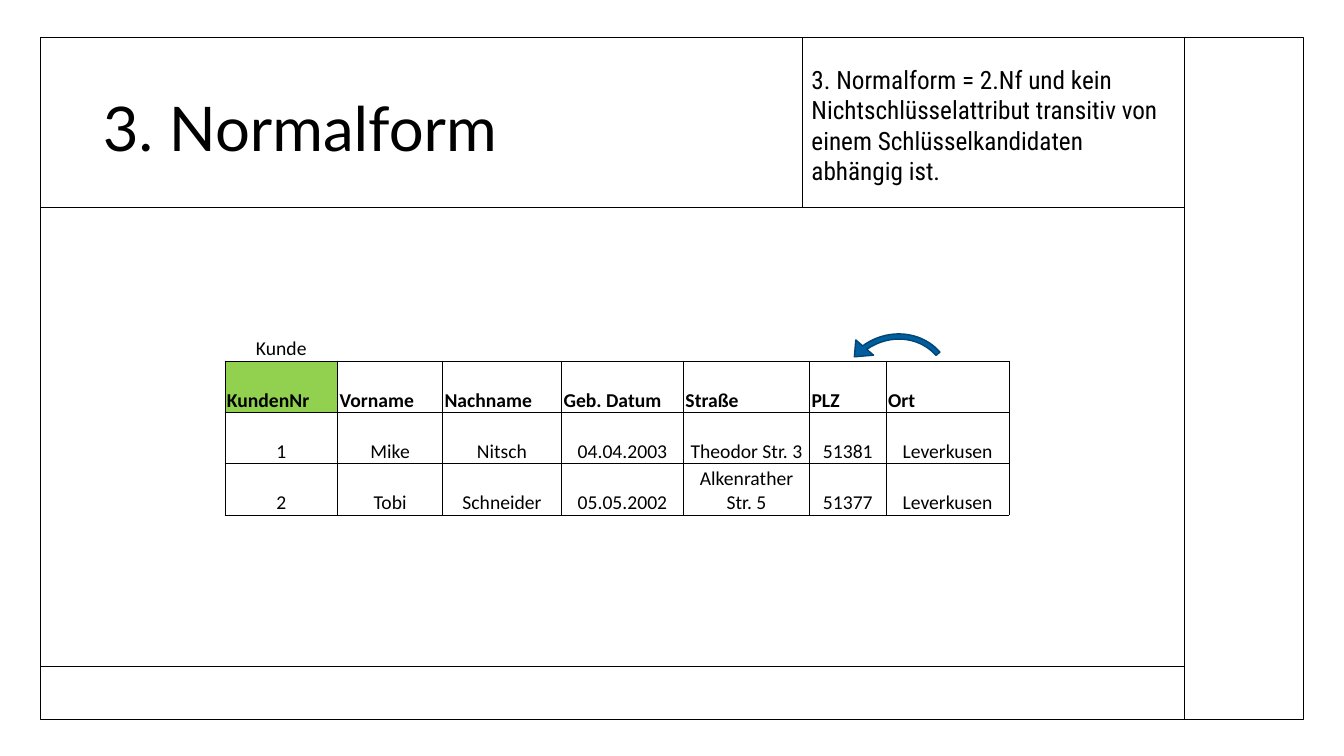
import pptx
import pptx.util
import pptx.dml.color
import pptx.enum.shapes
import pptx.enum.text
import pptx.oxml
import pptx.oxml.ns
import lxml.etree

Inches = pptx.util.Inches
Pt = pptx.util.Pt
RGBColor = pptx.dml.color.RGBColor
Align = pptx.enum.text.PP_ALIGN
Anchor = pptx.enum.text.MSO_ANCHOR
Shape = pptx.enum.shapes.MSO_SHAPE
qn = pptx.oxml.ns.qn

TITLE = "3. Normalform"
DEFINITION = ("3. Normalform = 2.Nf und kein Nichtschlüsselattribut transitiv von "
              "einem Schlüsselkandidaten abhängig ist.")
CUSTOMERS = [
    ["Kunde", "", "", "", "", "", ""],
    ["KundenNr", "Vorname", "Nachname", "Geb. Datum", "Straße", "PLZ", "Ort"],
    ["1", "Mike", "Nitsch", "04.04.2003", "Theodor Str. 3", "51381", "Leverkusen"],
    ["2", "Tobi", "Schneider", "05.05.2002", "Alkenrather Str. 5", "51377", "Leverkusen"],
]
COLUMN_WIDTHS = [1.12, 1.04, 1.18, 1.21, 1.25, 0.76, 1.22]
ROW_HEIGHTS = [0.4, 0.51, 0.51, 0.51]
CAPTION_ROW, HEADER_ROW = 0, 1

LEFT, TOP, RIGHT, BOTTOM = 0.4, 0.37, 12.93, 7.14
HEADER_BOTTOM, FOOTER_TOP = 2.06, 6.61
BODY_RIGHT, TITLE_RIGHT = 11.75, 7.96
DIVIDERS = [
    (LEFT, FOOTER_TOP, BODY_RIGHT, FOOTER_TOP),
    (BODY_RIGHT, TOP, BODY_RIGHT, BOTTOM),
    (LEFT, HEADER_BOTTOM, BODY_RIGHT, HEADER_BOTTOM),
    (TITLE_RIGHT, TOP, TITLE_RIGHT, HEADER_BOTTOM),
]
ARROW_ADJUSTMENTS = [0.04, 8.95, 157.88, 108, 0.09]
NO_STYLE = "{2D5ABB26-0587-4C30-8999-92F81FD0307C}"

BLACK = RGBColor(0x00, 0x00, 0x00)
KEY_GREEN = RGBColor(0x92, 0xD0, 0x50)
ARROW_BLUE = RGBColor(0x00, 0x5E, 0x9E)
ARROW_EDGE = RGBColor(0x00, 0x46, 0x75)


def format_text(para, font_name, size, bold=False):
    for span in para.runs:
        span.font.name = font_name
        span.font.size = Pt(size)
        span.font.bold = bold
        span.font.color.rgb = BLACK


def add_borders(cell, sides):
    properties = cell._tc.get_or_add_tcPr()
    for side in sides:
        properties.append(pptx.oxml.parse_xml(
            f'<a:ln{side} xmlns:a="http://schemas.openxmlformats.org/drawingml/2006/main" '
            f'w="{Pt(0.5)}"><a:solidFill><a:srgbClr val="{BLACK}"/></a:solidFill></a:ln{side}>'))


def add_title(page):
    title = page.shapes.title
    title.left, title.top = Inches(0.92), Inches(0.73)
    title.width, title.height = Inches(6.54), Inches(1.14)
    title.text_frame.text = TITLE
    title.text_frame.vertical_anchor = Anchor.MIDDLE
    para = title.text_frame.paragraphs[0]
    para.alignment = Align.LEFT
    para.line_spacing = 0.9
    format_text(para, "Lato", 44)


def add_frame(page):
    frame = page.shapes.add_shape(Shape.RECTANGLE, Inches(LEFT), Inches(TOP),
                                  Inches(RIGHT - LEFT), Inches(BOTTOM - TOP))
    frame.shadow.inherit = False
    frame.fill.background()
    frame.line.color.rgb = BLACK
    frame.line.width = Pt(1)
    for ends in DIVIDERS:
        divider = page.shapes.add_connector(pptx.enum.shapes.MSO_CONNECTOR.STRAIGHT,
                                            *[Inches(end) for end in ends])
        divider.line.color.rgb = BLACK
        divider.line.width = Pt(1)
        lxml.etree.SubElement(divider.element.spPr, qn("a:effectLst"))


def add_customer_table(page):
    graphic = page.shapes.add_table(len(ROW_HEIGHTS), len(COLUMN_WIDTHS),
                                    Inches(2.23), Inches(3.18),
                                    Inches(sum(COLUMN_WIDTHS)), Inches(sum(ROW_HEIGHTS)))
    table = graphic.table
    table.first_row = table.horz_banding = False
    table._tbl.tblPr.find(qn("a:tableStyleId")).text = NO_STYLE
    for column, width in zip(table.columns, COLUMN_WIDTHS):
        column.width = Inches(width)
    for row_index, (row, height) in enumerate(zip(table.rows, ROW_HEIGHTS)):
        row.height = Inches(height)
        is_header = row_index == HEADER_ROW
        for cell, text in zip(row.cells, CUSTOMERS[row_index]):
            add_borders(cell, "B" if row_index == CAPTION_ROW else "LRTB")
            cell.fill.background()
            cell.vertical_anchor = Anchor.BOTTOM
            cell.margin_left = cell.margin_right = cell.margin_top = Inches(0.02)
            cell.margin_bottom = 0
            if text:
                cell.text_frame.text = text
                para = cell.text_frame.paragraphs[0]
                para.alignment = Align.LEFT if is_header else Align.CENTER
                format_text(para, "Calibri", 14, is_header)
    key_fill = table.cell(HEADER_ROW, 0).fill
    key_fill.solid()
    key_fill.fore_color.rgb = KEY_GREEN


def add_dependency_arrow(page):
    arrow = page.shapes.add_shape(Shape.CIRCULAR_ARROW, Inches(8.19), Inches(3.24),
                                  Inches(1.37), Inches(1.29))
    for index, value in enumerate(ARROW_ADJUSTMENTS):
        arrow.adjustments[index] = value
    arrow.rotation = 318.7
    arrow.element.spPr.find(qn("a:xfrm")).set("flipH", "1")
    arrow.shadow.inherit = False
    arrow.fill.solid()
    arrow.fill.fore_color.rgb = ARROW_BLUE
    arrow.line.color.rgb = ARROW_EDGE
    arrow.line.width = Pt(1)


def add_definition(page):
    box = page.shapes.add_textbox(Inches(7.95), Inches(0.59), Inches(3.81), Inches(1.62))
    box.text_frame.word_wrap = True
    box.text_frame.auto_size = pptx.enum.text.MSO_AUTO_SIZE.SHAPE_TO_FIT_TEXT
    box.text_frame.text = DEFINITION
    format_text(box.text_frame.paragraphs[0], "Roboto Condensed", 18)


def main():
    deck = pptx.Presentation()
    deck.slide_width, deck.slide_height = Inches(13.33), Inches(7.5)
    page = deck.slides.add_slide(deck.slide_layouts[5])
    add_title(page)
    add_frame(page)
    add_customer_table(page)
    add_dependency_arrow(page)
    add_definition(page)
    deck.save("out.pptx")


if __name__ == "__main__":
    main()
